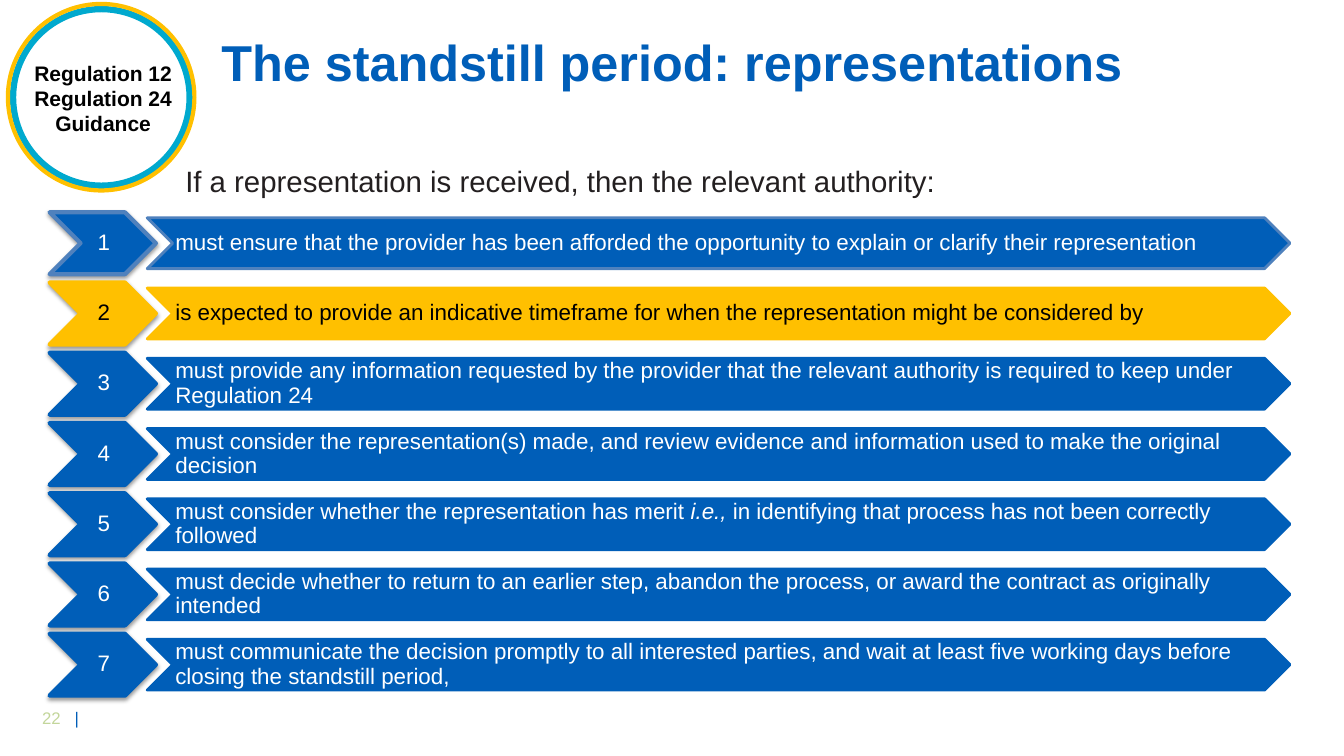
"""Build the slide on representations made during the standstill period."""
from dataclasses import dataclass

from lxml import etree
from pptx import Presentation
from pptx.dml.color import RGBColor
from pptx.enum.shapes import MSO_SHAPE
from pptx.enum.text import MSO_ANCHOR, PP_ALIGN
from pptx.oxml.ns import qn
from pptx.util import Cm, Pt

CHEVRON, OVAL = MSO_SHAPE.CHEVRON, MSO_SHAPE.OVAL
LEFT, CENTER = PP_ALIGN.LEFT, PP_ALIGN.CENTER
TOP, MIDDLE = MSO_ANCHOR.TOP, MSO_ANCHOR.MIDDLE

FONT = "Arial"
COLORS = {
    "blue": "005EB8", "steel": "4F81BD", "amber": "FFC000", "cyan": "00A9CE",
    "white": "FFFFFF", "black": "000000", "ink": "231F20", "sage": "C3D69B",
}
FIRST_CENTER, STEP_PITCH = 6.13, 1.77


@dataclass(frozen=True)
class Run:
    text: str
    size: float
    color: str
    bold: bool = False
    italic: bool = False


@dataclass(frozen=True)
class Box:
    left: float
    top: float
    width: float
    height: float

    def lengths(self) -> tuple:
        return Cm(self.left), Cm(self.top), Cm(self.width), Cm(self.height)


@dataclass(frozen=True)
class Step:
    phrases: tuple
    fill: str = "blue"
    line: str = "blue"
    text_color: str = "white"


STEPS = (
    Step(("must ensure that the provider has been afforded the opportunity to explain "
          "or clarify their representation",), line="steel"),
    Step(("is expected to provide an indicative timeframe for when the representation "
          "might be considered by",), "amber", "amber", "black"),
    Step(("must provide any information requested by the provider that the relevant "
          "authority is required to keep under Regulation 24",)),
    Step(("must consider the representation(s) made, and review evidence and "
          "information used to make the original decision",)),
    Step(("must consider whether the representation has merit ", "i.e.,",
          " in identifying that process has not been correctly followed")),
    Step(("must decide whether to return to an earlier step, abandon the process, "
          "or award the contract as originally intended",)),
    Step(("must communicate the decision promptly to all interested parties, and wait "
          "at least five working days before closing the standstill period,",)),
)


def rgb(name: str) -> RGBColor:
    return RGBColor.from_string(COLORS[name])


def write(paragraph, runs: list[Run], align=LEFT) -> None:
    paragraph.alignment = align
    for item in runs:
        run = paragraph.add_run()
        run.text = item.text
        run.font.name = FONT
        run.font.size = Pt(item.size)
        run.font.bold = item.bold
        run.font.italic = item.italic
        run.font.color.rgb = rgb(item.color)


def add_text(shapes, box: Box, paragraphs: list[list[Run]], align=LEFT, anchor=TOP):
    text_box = shapes.add_textbox(*box.lengths())
    frame = text_box.text_frame
    frame.word_wrap = True
    frame.vertical_anchor = anchor
    for index, runs in enumerate(paragraphs):
        paragraph = frame.add_paragraph() if index else frame.paragraphs[0]
        write(paragraph, runs, align)
    return text_box


def add_outlined(shapes, kind, box: Box, fill: str | None, line: str, width: float):
    shape = shapes.add_shape(kind, *box.lengths())
    shape.shadow.inherit = False
    if fill:
        shape.fill.solid()
        shape.fill.fore_color.rgb = rgb(fill)
    else:
        shape.fill.background()
    shape.line.color.rgb = rgb(line)
    shape.line.width = Pt(width)
    return shape


def add_shadow(shape) -> None:
    effects = shape._element.spPr.find(qn("a:effectLst"))
    shadow = etree.SubElement(effects, qn("a:outerShdw"), blurRad=str(Pt(3.1)),
                              dist=str(Pt(1.6)), dir="5400000", rotWithShape="0")
    color = etree.SubElement(shadow, qn("a:srgbClr"), val=COLORS["black"])
    etree.SubElement(color, qn("a:alpha"), val="38000")


def add_arrow(shapes, box: Box, step: Step, line_width: float, runs: list[Run],
              align, inset: float):
    arrow = add_outlined(shapes, CHEVRON, box, step.fill, step.line, line_width)
    frame = arrow.text_frame
    frame.word_wrap = True
    frame.vertical_anchor = MIDDLE
    frame.margin_left, frame.margin_right = Cm(inset), Cm(0)
    frame.margin_top = frame.margin_bottom = Cm(0.02)
    frame.paragraphs[0].line_spacing = 0.9
    write(frame.paragraphs[0], runs, align)
    return arrow


def add_step(shapes, index: int, step: Step) -> None:
    center = FIRST_CENTER + index * STEP_PITCH
    number_box = Box(1.25, center - 0.78, 2.68, 1.56)
    text_box = Box(3.71, center - 0.64, 28.8, 1.28)
    number = [Run(str(index + 1), 16, step.text_color)]
    text = [Run(phrase, 16, step.text_color, italic=phrase == "i.e.,")
            for phrase in step.phrases]
    add_shadow(add_arrow(shapes, number_box, step, 3, number, CENTER, 0.05))
    add_arrow(shapes, text_box, step, 2, text, LEFT, 0.07)


def add_page_number(shapes) -> None:
    footer = add_text(shapes, Box(0.81, 17.7, 1.8, 0.76),
                      [[Run("22\t", 12, "sage"), Run("|", 12, "blue")]])
    properties = footer.text_frame.paragraphs[0]._p.get_or_add_pPr()
    tabs = etree.SubElement(properties, qn("a:tabLst"))
    etree.SubElement(tabs, qn("a:tab"), pos=str(Cm(0.82)), algn="l")


def add_badge(shapes) -> None:
    badge = shapes.add_group_shape().shapes
    add_outlined(badge, OVAL, Box(0.33, 0.23, 4.45, 4.45), "white", "cyan", 4.5)
    lines = ("Regulation 12 Regulation 24", "Guidance")
    add_text(badge, Box(0.25, 1.4, 4.7, 2.18),
             [[Run(line, 15, "black", bold=True)] for line in lines], CENTER)
    add_outlined(shapes, OVAL, Box(0.2, 0.1, 4.7, 4.7), None, "amber", 3)


def main() -> None:
    presentation = Presentation()
    presentation.slide_width, presentation.slide_height = Cm(33.87), Cm(19.05)
    slide = presentation.slides.add_slide(presentation.slide_layouts[6])
    shapes = slide.shapes
    add_page_number(shapes)
    for index, step in enumerate(STEPS):
        add_step(shapes, index, step)
    add_text(shapes, Box(4.04, 0.33, 25.8, 2.41),
             [[Run("The standstill period: representations", 36, "blue", bold=True)]],
             CENTER, MIDDLE)
    add_text(shapes, Box(4.42, 3.99, 27.15, 1.14),
             [[Run("If a representation is received, then the relevant authority:",
                   21, "ink")]])
    add_badge(shapes)
    presentation.save("out.pptx")


if __name__ == "__main__":
    main()
